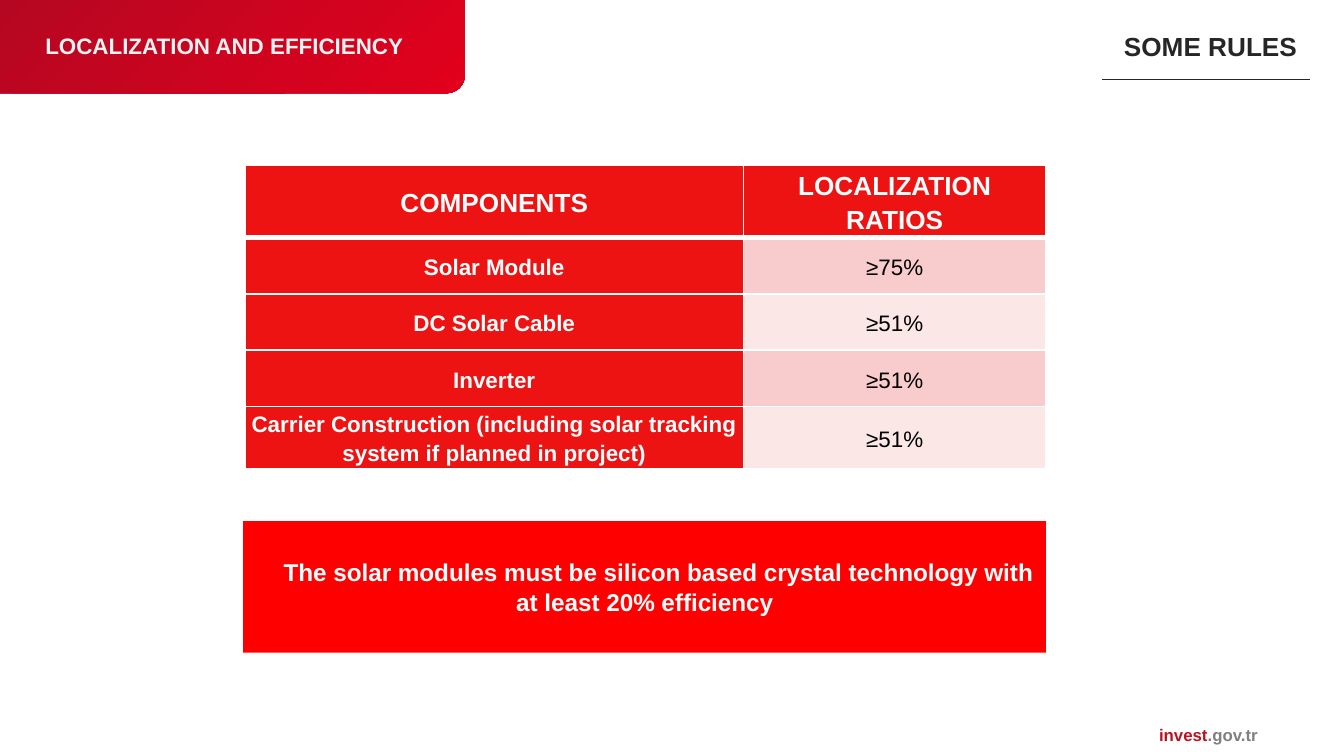
from lxml.etree import SubElement
from pptx import Presentation
from pptx.dml.color import RGBColor
from pptx.enum.shapes import MSO_CONNECTOR, MSO_SHAPE
from pptx.enum.text import MSO_ANCHOR, PP_ALIGN
from pptx.oxml import parse_xml
from pptx.oxml.ns import nsdecls, qn
from pptx.util import Pt

COLORS = {
    "white": "FFFFFF", "black": "000000", "ink": "262626", "gray": "808080",
    "pale": "F2F2F2", "crimson": "BD1120", "tab_light": "E2001C",
    "tab_dark": "B10822", "table_red": "EE1313", "band_dark": "F8CCCC",
    "band_light": "FCE7E7", "banner": "FF0000",
}
ROWS = [
    ("COMPONENTS", "LOCALIZATION RATIOS"),
    ("Solar Module", "≥75%"),
    ("DC Solar Cable", "≥51%"),
    ("Inverter", "≥51%"),
    ("Carrier Construction (including solar tracking system if planned in project)", "≥51%"),
]


def rgb(name):
    return RGBColor.from_string(COLORS[name])


def add_text(p, text, size=12, color="white", bold=True, align=PP_ALIGN.CENTER):
    p.alignment = align
    r = p.add_run()
    r.text = text
    r.font.name = "Arial"
    r.font.size = Pt(size)
    r.font.bold = bold
    r.font.color.rgb = rgb(color)


def set_borders(cell, bottom):
    """Draw white cell edges, with a bottom edge of the given width in points."""
    tc_pr = cell._tc.get_or_add_tcPr()
    for i, (edge, width) in enumerate(zip("LRTB", (1, 1, 1, bottom))):
        tc_pr.insert(i, parse_xml(
            f'<a:ln{edge} {nsdecls("a")} w="{Pt(width)}"><a:solidFill>'
            f'<a:srgbClr val="{COLORS["white"]}"/></a:solidFill></a:ln{edge}>'))


class SlideBuilder:
    def __init__(self, prs):
        self.slide = prs.slides.add_slide(prs.slide_layouts[6])
        self.shapes = self.slide.shapes

    def text_box(self, x, y, w, h, runs, wrap=True, spacing=None, **fmt):
        """Add one paragraph made of (text, color) runs."""
        tf = self.shapes.add_textbox(Pt(x), Pt(y), Pt(w), Pt(h)).text_frame
        tf.word_wrap = wrap
        p = tf.paragraphs[0]
        p.line_spacing = spacing
        for text, color in runs:
            add_text(p, text, color=color, **fmt)

    def shape(self, kind, x, y, w, h):
        sp = self.shapes.add_shape(kind, Pt(x), Pt(y), Pt(w), Pt(h))
        sp.shadow.inherit = False
        sp.line.fill.background()
        return sp

    def header_tab(self, x, y, w, h):
        """Add a rounded tab that glows from its lower right corner."""
        sp = self.shape(MSO_SHAPE.ROUNDED_RECTANGLE, x, y, w, h)
        sp.fill.gradient()
        for stop, color in zip(sp.fill.gradient_stops, ("tab_light", "tab_dark")):
            stop.color.rgb = rgb(color)
        grad = sp._element.spPr.find(qn("a:gradFill"))
        grad.remove(grad.find(qn("a:lin")))
        glow = SubElement(grad, qn("a:path"), path="circle")
        SubElement(glow, qn("a:fillToRect"), l="100000", t="100000")

    def banner(self, x, y, w, h, text, indent, **fmt):
        sp = self.shape(MSO_SHAPE.RECTANGLE, x, y, w, h)
        sp.fill.solid()
        sp.fill.fore_color.rgb = rgb("banner")
        tf = sp.text_frame
        tf.word_wrap = True
        tf.vertical_anchor = MSO_ANCHOR.MIDDLE
        p = tf.paragraphs[0]
        p._p.get_or_add_pPr().set("indent", str(Pt(indent)))
        add_text(p, text, **fmt)

    def line(self, x1, y1, x2, y2, color, width):
        cxn = self.shapes.add_connector(
            MSO_CONNECTOR.STRAIGHT, Pt(x1), Pt(y1), Pt(x2), Pt(y2))
        cxn.line.color.rgb = rgb(color)
        cxn.line.width = Pt(width)
        SubElement(cxn._element.spPr, qn("a:effectLst"))

    def table(self, x, y, col_widths, row_heights, rows):
        table = self.shapes.add_table(
            len(rows), len(col_widths), Pt(x), Pt(y),
            Pt(sum(col_widths)), Pt(sum(row_heights))).table
        for col, width in zip(table.columns, col_widths):
            col.width = Pt(width)
        for i, (row, height) in enumerate(zip(rows, row_heights)):
            table.rows[i].height = Pt(height)
            for j, text in enumerate(row):
                self.cell(table.cell(i, j), text, i, is_label=i == 0 or j == 0)

    def cell(self, cell, text, row, is_label):
        band = "band_dark" if row % 2 else "band_light"
        cell.fill.solid()
        cell.fill.fore_color.rgb = rgb("table_red" if is_label else band)
        cell.vertical_anchor = MSO_ANCHOR.MIDDLE
        cell.margin_left = cell.margin_right = Pt(3)
        cell.margin_top = cell.margin_bottom = 0
        p = cell.text_frame.paragraphs[0]
        p.line_spacing = 1.15
        p.space_after = Pt(10)
        add_text(p, text, size=12 if row else 14,
                 color="white" if is_label else "black", bold=is_label)
        set_borders(cell, bottom=1 if row else 3)


def main():
    prs = Presentation()
    prs.slide_width, prs.slide_height = Pt(720), Pt(405)
    s = SlideBuilder(prs)
    s.text_box(613.5, 382.3, 67.7, 20, [("invest", "crimson"), (".gov.tr", "gray")],
               wrap=False, spacing=Pt(13), size=9)
    s.header_tab(-16, -8.5, 265, 58.5)
    s.text_box(17.2, 13.7, 335, 21.8, [("LOCALIZATION AND EFFICIENCY", "pale")],
               align=PP_ALIGN.LEFT)
    s.table(131.3, 88.6, [267, 162], [31.8] + [30.2] * 4, ROWS)
    s.banner(130.3, 279.2, 430, 70.4,
             "The solar modules must be silicon based crystal technology "
             "with at least 20% efficiency", indent=14.4, size=13)
    s.text_box(264, 13, 438, 24.2, [("SOME RULES", "ink")],
               size=14, align=PP_ALIGN.RIGHT)
    s.line(590.4, 42.5, 702, 42.5, "ink", 0.25)
    prs.save("out.pptx")


if __name__ == "__main__":
    main()
